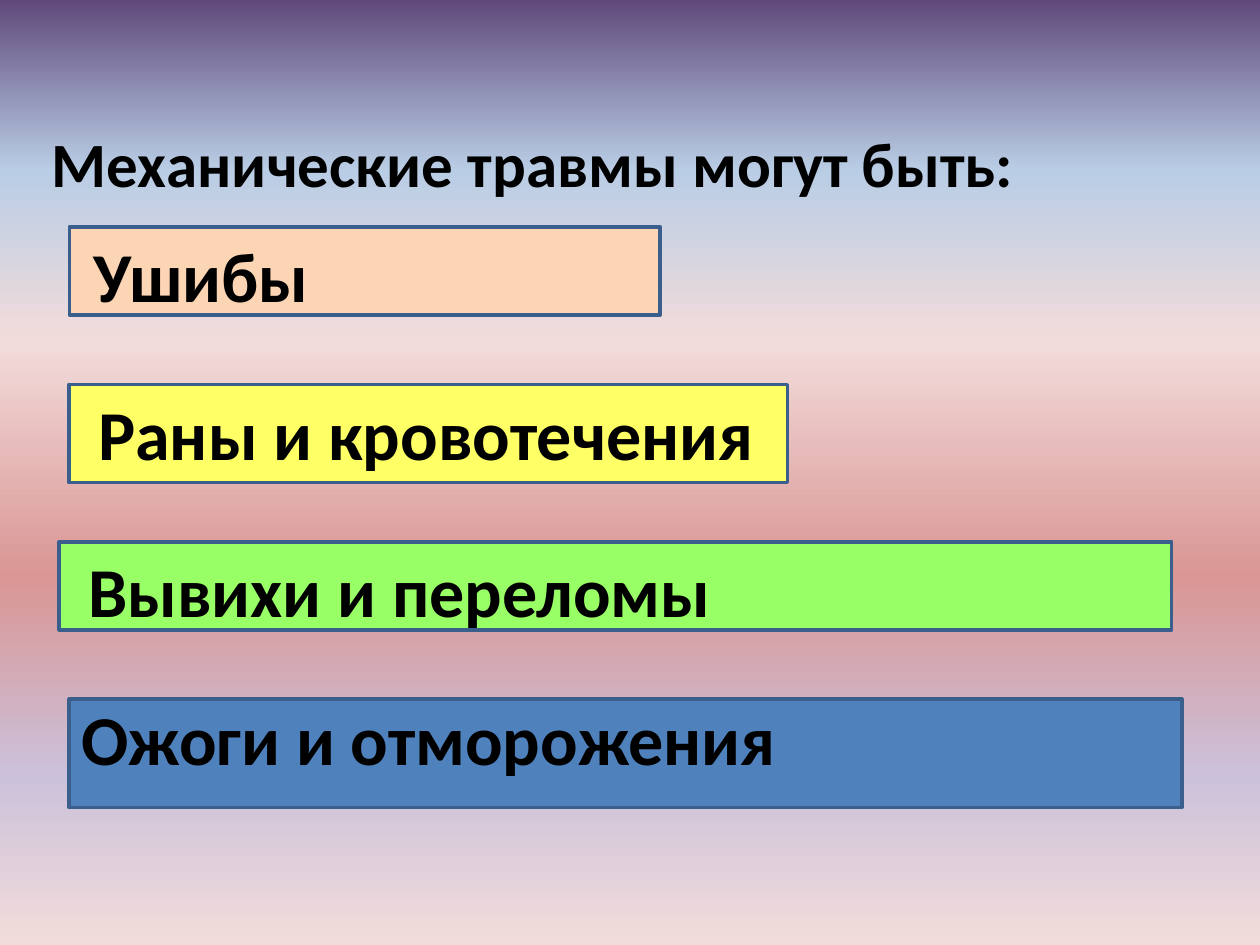
from lxml import etree
from pptx import Presentation
from pptx.dml.color import RGBColor
from pptx.enum import shapes, text
from pptx.oxml.ns import qn
from pptx.util import Inches, Pt


def color(code):
    return RGBColor.from_string(code)


def label(words, left, top, wide, high, size, inset=0.1):
    """Add a bold black line of text, starting inset inches into its box."""
    box = slide.shapes.add_textbox(Inches(left), Inches(top), Inches(wide), Inches(high))
    frame = box.text_frame
    frame.word_wrap = True
    frame.auto_size = text.MSO_AUTO_SIZE.SHAPE_TO_FIT_TEXT
    frame.margin_left = Inches(inset)
    run = frame.paragraphs[0].add_run()
    run.text = words
    run.font.name = "Calibri"
    run.font.size = Pt(size)
    run.font.bold = True
    run.font.color.rgb = color("000000")


deck = Presentation()
deck.slide_width, deck.slide_height = Inches(10), Inches(7.5)
slide = deck.slides.add_slide(deck.slide_layouts[6])

# Background: six colour stops from top to bottom
stops = [(0, "604A7B"), (18, "B9CDE5"), (36, "F2DCDB"),
         (61, "D99694"), (82, "CCC1DA"), (100, "F2DCDB")]
fill = slide.background.fill
fill.gradient()
fill.gradient_angle = 270
grad = slide.background._cSld.find(".//" + qn("a:gsLst"))
for old in list(grad):
    grad.remove(old)
for place, code in stops:
    stop = etree.SubElement(grad, qn("a:gs"), pos=str(place * 1000))
    etree.SubElement(stop, qn("a:srgbClr"), val=code)

label("Механические травмы могут быть:", 0.31, 0.94, 8.02, 0.71, 36)

# Bars: words, fill, left, width, height, then text left, top, width, inset
first, step = 1.8, 1.25
bars = [
    ("Ушибы", "FCD5B5", 0.55, 4.69, 0.7, 0.39, 0, 2.18, 0.35),
    ("Раны и кровотечения", "FFFF66", 0.55, 5.7, 0.78, 0.55, 0, 6.02, 0.23),
    ("Вывихи и переломы", "99FF66", 0.47, 8.83, 0.7, 0.47, 0, 8.75, 0.23),
    ("Ожоги и отморожения", "4F81BD", 0.55, 8.83, 0.86, 0.55, -0.08, 8.44, 0.1),
]
for row, (words, code, left, wide, high, start, shift, room, inset) in enumerate(bars):
    top = first + row * step
    bar = slide.shapes.add_shape(shapes.MSO_SHAPE.RECTANGLE, Inches(left),
                                 Inches(top), Inches(wide), Inches(high))
    bar.shadow.inherit = False
    bar.fill.solid()
    bar.fill.fore_color.rgb = color(code)
    bar.line.color.rgb = color("3A5F8C")
    bar.line.width = Pt(2)
    label(words, start, top + shift, room, 0.77, 40, inset)

deck.save("out.pptx")
